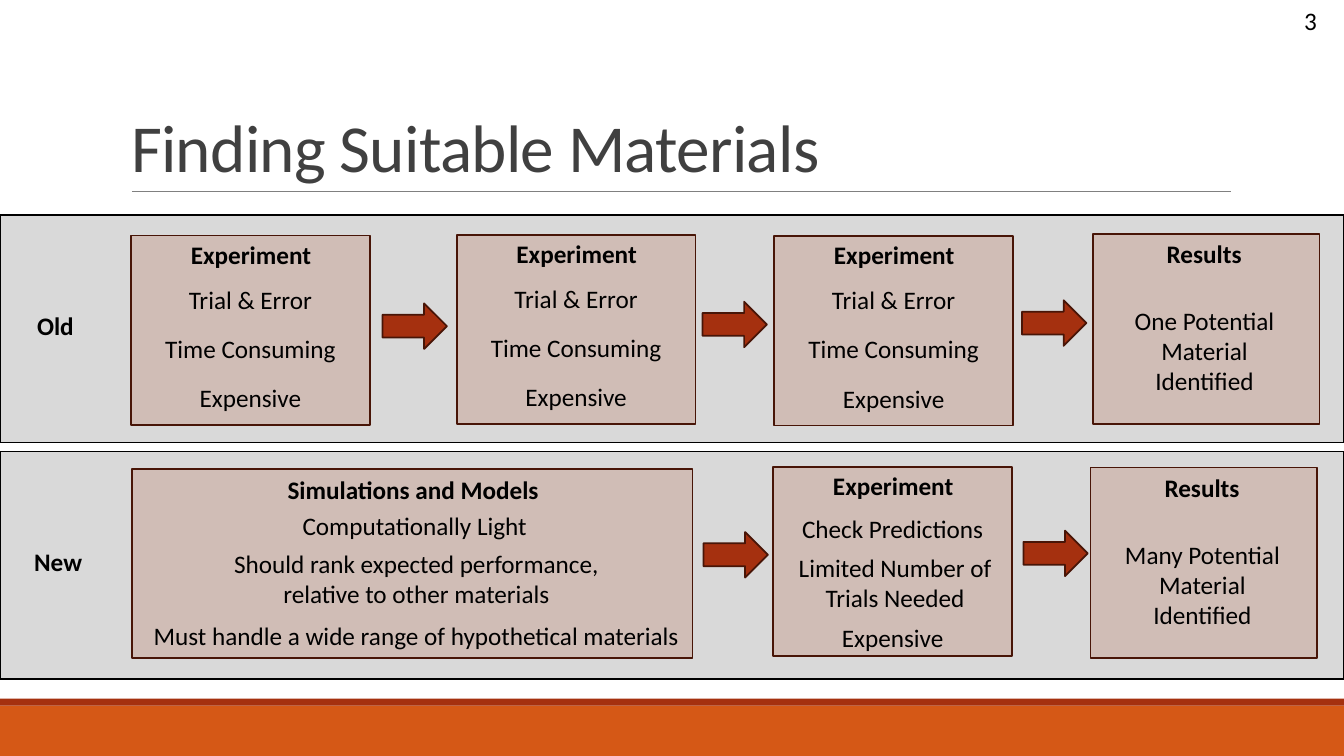
from dataclasses import dataclass

from lxml.etree import SubElement
from pptx import Presentation
from pptx.dml.color import RGBColor
from pptx.enum.shapes import MSO_CONNECTOR, MSO_SHAPE
from pptx.enum.text import MSO_ANCHOR, MSO_AUTO_SIZE, PP_ALIGN
from pptx.oxml.ns import qn
from pptx.util import Pt


@dataclass(frozen=True)
class Theme:
    font: str = "Calibri"
    head: int = 48
    body: int = 18
    edge: float = 1.25
    ink: str = "000000"
    title: str = "404040"
    rule: str = "808080"
    band: str = "D9D9D9"
    card: str = "D0BDB6"
    dark: str = "481507"
    red: str = "A5300F"
    orange: str = "D55816"


class Deck:
    def __init__(self, theme):
        self.theme = theme
        self.file = Presentation()
        self.file.slide_width, self.file.slide_height = Pt(960), Pt(540)
        self.slide = self.file.slides.add_slide(self.file.slide_layouts[5])

    def run(self, para, text, size, color, bold=False):
        run = para.add_run()
        run.text = text
        font = run.font
        font.name, font.size, font.bold = self.theme.font, Pt(size), bold
        font.color.rgb = RGBColor.from_string(color)
        return run

    def title(self, text, x, y, w, h):
        box = self.slide.shapes.title
        box.left, box.top, box.width, box.height = map(Pt, (x, y, w, h))
        frame = box.text_frame
        frame.auto_size = MSO_AUTO_SIZE.NONE
        frame.word_wrap = True
        frame.vertical_anchor = MSO_ANCHOR.BOTTOM
        para = frame.paragraphs[0]
        para.alignment, para.line_spacing = PP_ALIGN.LEFT, 0.85
        run = self.run(para, text, self.theme.head, self.theme.title)
        run._r.get_or_add_rPr().set("spc", "-50")

    def shape(self, x, y, w, h, fill, edge=None, kind=MSO_SHAPE.RECTANGLE, host=None):
        shape = (host or self.slide).shapes.add_shape(kind, *map(Pt, (x, y, w, h)))
        shape.shadow.inherit = False
        shape.fill.solid()
        shape.fill.fore_color.rgb = RGBColor.from_string(fill)
        if edge:
            shape.line.color.rgb = RGBColor.from_string(edge)
            shape.line.width = Pt(self.theme.edge)
        else:
            shape.line.fill.background()

    def text(self, text, x, y, w, bold=False, align=PP_ALIGN.LEFT, wrap=True, host=None):
        box = (host or self.slide).shapes.add_textbox(*map(Pt, (x, y, w, 28.8)))
        frame = box.text_frame
        frame.word_wrap = wrap
        frame.auto_size = MSO_AUTO_SIZE.SHAPE_TO_FIT_TEXT
        para = frame.paragraphs[0]
        para.alignment = align
        self.run(para, text, self.theme.body, self.theme.ink, bold)

    def arrow(self, x, y):
        self.shape(x, y, 46, 32.5, self.theme.red, self.theme.dark, MSO_SHAPE.RIGHT_ARROW)

    def card(self, x, y, w, h, rows):
        """Each row is text, drop from the card's top, width, shift from its centre."""
        group = self.slide.shapes.add_group_shape()
        self.shape(x, y, w, h, self.theme.card, self.theme.dark, host=group)
        for i, (text, drop, wide, shift) in enumerate(rows):
            left = x + (w - wide) / 2 + shift
            self.text(text, left, y + drop, wide, i == 0, PP_ALIGN.CENTER, host=group)

    def rule(self, x, y, end):
        line = self.slide.shapes.add_connector(
            MSO_CONNECTOR.STRAIGHT, Pt(x), Pt(y), Pt(end), Pt(y))
        line.line.color.rgb = RGBColor.from_string(self.theme.rule)
        line.line.width = Pt(0.5)
        SubElement(line._element.spPr, qn("a:effectLst"))


def main():
    theme = Theme()
    deck = Deck(theme)

    # Footer bars, title and its rule
    deck.shape(0, 504, 960, 36, theme.orange)
    deck.shape(0, 499, 960, 5, theme.red)
    deck.rule(94.3, 136.8, 879)
    deck.title("Finding Suitable Materials", 86.4, 22.3, 792, 114.5)

    # Bands with their labels
    for name, top, x, y, w in (("New", 322.5, 17.3, 386.6, 49),
                               ("Old", 153.4, 19.4, 218.2, 41)):
        deck.shape(0, top, 960, 162.7, theme.band, theme.ink)
        deck.text(name, x, y, w, bold=True, wrap=False)

    # Old way: three like trials
    trial = [("Experiment", -0.9, 171.4, 0.4), ("Trial & Error", 31, 129.6, 0),
             ("Time Consuming", 66.2, 172, 0), ("Expensive", 101.5, 110, 0)]
    for x, y in ((93.6, 168.3), (326.2, 167.6), (553, 168.5)):
        deck.card(x, y, 170.6, 135.4, trial)

    # New way: models, then one trial
    deck.card(94.3, 334.8, 400.3, 135.4, [
        ("Simulations and Models", 0.7, 399, 0.7),
        ("Computationally Light", 26, 189.4, 1.8),
        ("Should rank expected performance, relative to other materials", 53.3, 314, 3),
        ("Must handle a wide range of hypothetical materials", 104.4, 400.3, 2.9)])
    deck.card(552.3, 333.4, 170.6, 135.4, [
        ("Experiment", -0.7, 171.4, 0.4), ("Check Predictions", 29.5, 149, 0),
        ("Limited Number of Trials Needed", 57.6, 175.7, 1.8),
        ("Expensive", 107.3, 110, 0)])

    # Results of both ways
    for count, x, y in (("One", 780.5, 167), ("Many", 779, 334)):
        deck.card(x, y, 162, 136, [
            ("Results", 0, 162, -1.4),
            (f"{count} Potential Material Identified", 47.5, 129.6, -1.1)])

    # Arrows between steps
    for x, y in ((273.2, 216.7), (501.8, 215.5), (730, 214.5), (502.5, 380), (731, 379)):
        deck.arrow(x, y)

    # Page number
    deck.text("3", 924.5, 0, 35.3)
    deck.file.save("out.pptx")


if __name__ == "__main__":
    main()
